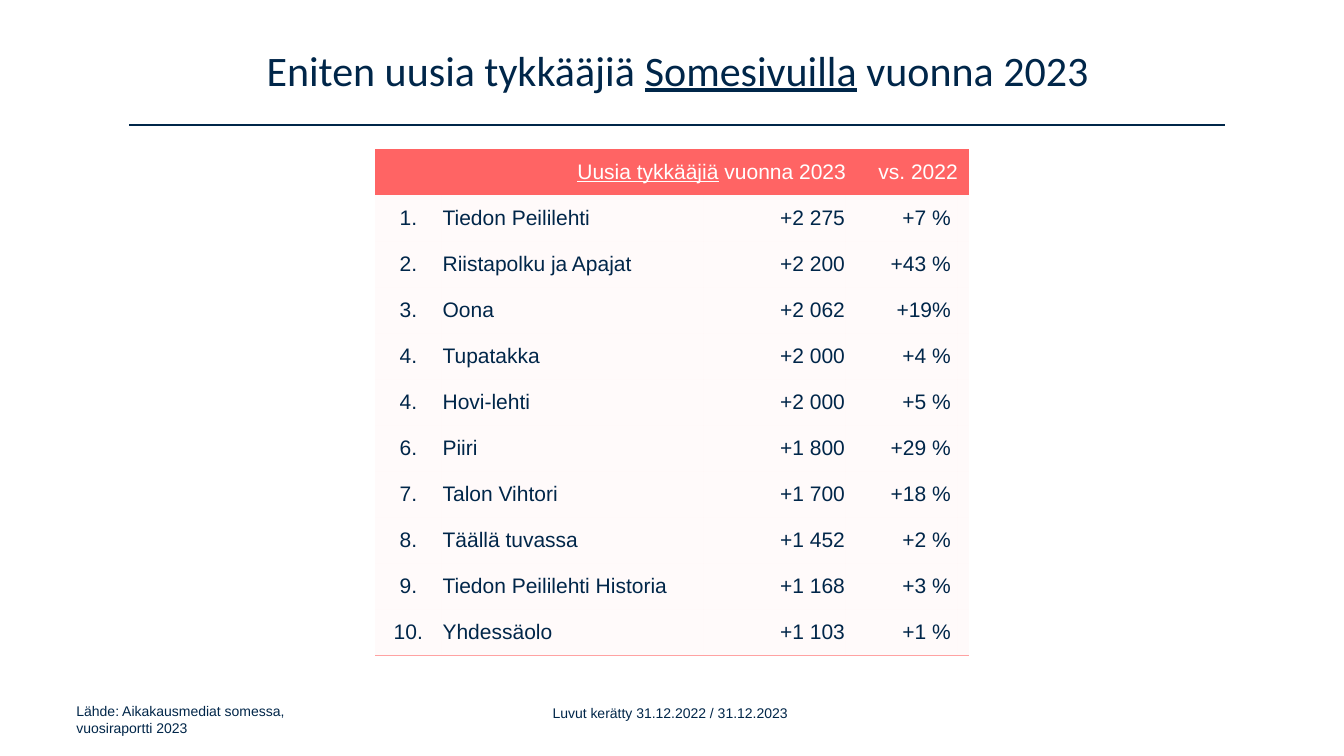
from lxml.etree import SubElement
from pptx import Presentation
from pptx.dml.color import RGBColor
from pptx.enum.shapes import MSO_CONNECTOR
from pptx.enum.text import MSO_ANCHOR, PP_ALIGN
from pptx.oxml import parse_xml
from pptx.oxml.ns import nsdecls, qn
from pptx.util import Inches, Pt

COLORS = {"navy": "002649", "coral": "FF6464", "blush": "FFE0E0", "border": "FFA2A2", "white": "FFFFFF"}
TITLE = {"name": "Calibri", "size": Pt(30), "bold": False}
NOTE = {"name": "Arial", "size": Pt(10)}
CELL = {"name": "Arial", "size": Pt(15), "bold": False}
COLUMNS = [0.66, 2.6, 1.41, 1.11, 0.11]
ALIGNMENTS = [PP_ALIGN.CENTER, PP_ALIGN.LEFT, PP_ALIGN.RIGHT, PP_ALIGN.RIGHT]
RANKING = [
    ("1.", "Tiedon Peililehti", "+2 275", "+7 %"),
    ("2.", "Riistapolku ja Apajat", "+2 200", "+43 %"),
    ("3.", "Oona", "+2 062", "+19%"),
    ("4.", "Tupatakka", "+2 000", "+4 %"),
    ("4.", "Hovi-lehti", "+2 000", "+5 %"),
    ("6.", "Piiri", "+1 800", "+29 %"),
    ("7.", "Talon Vihtori", "+1 700", "+18 %"),
    ("8.", "Täällä tuvassa", "+1 452", "+2 %"),
    ("9.", "Tiedon Peililehti Historia", "+1 168", "+3 %"),
    ("10.", "Yhdessäolo", "+1 103", "+1 %"),
]
NO_STYLE = "{2D5ABB26-0587-4C30-8999-92F81FD0307C}"


def write(paragraph, segments, font, color, alignment):
    """Fill a paragraph with (text, underlined) segments."""
    paragraph.alignment = alignment
    for text, underlined in segments:
        for index, line in enumerate(text.split("\n")):
            if index:
                paragraph.add_line_break()
            run = paragraph.add_run()
            run.text = line
            for key, value in {**font, "underline": underlined}.items():
                setattr(run.font, key, value)
            run.font.color.rgb = RGBColor.from_string(COLORS[color])


def place(shape, box):
    """Move and size a shape to a box given in inches."""
    for key, value in zip(("left", "top", "width", "height"), box):
        setattr(shape, key, Inches(value))


def add_heading(slide, box):
    """Format the title and draw the rule below it."""
    title = slide.shapes.title
    place(title, box)
    title.text_frame.vertical_anchor = MSO_ANCHOR.MIDDLE
    title.text_frame.word_wrap = True
    paragraph = title.text_frame.paragraphs[0]
    paragraph.line_spacing = 0.9
    segments = [("Eniten uusia tykkääjiä ", False), ("Somesivuilla", True), (" vuonna 2023", False)]
    write(paragraph, segments, TITLE, "navy", PP_ALIGN.CENTER)

    left, top, width, height = box
    rule_top = Inches(top + height + 0.01)
    rule = slide.shapes.add_connector(
        MSO_CONNECTOR.STRAIGHT, Inches(left + 0.36), rule_top, Inches(left + width - 0.37), rule_top)
    rule.line.color.rgb = RGBColor.from_string(COLORS["navy"])
    rule.line.width = Pt(1)
    SubElement(rule._element.spPr, qn("a:effectLst"))


def format_cell(cell, color, margins, opacity=None):
    """Set the fill, margins and anchor of a table cell."""
    cell.fill.solid()
    cell.fill.fore_color.rgb = RGBColor.from_string(COLORS[color])
    if opacity:
        SubElement(cell._tc.tcPr.find(".//" + qn("a:srgbClr")), qn("a:alpha"), val=str(opacity * 1000))
    cell.vertical_anchor = MSO_ANCHOR.MIDDLE
    for side, margin in zip(("left", "top", "right", "bottom"), margins):
        setattr(cell, "margin_" + side, Inches(margin))


def add_bottom_border(cell):
    """Draw a thin line along the bottom of a cell."""
    cell._tc.tcPr.insert(0, parse_xml(
        f'<a:lnB {nsdecls("a")} w="3175"><a:solidFill><a:srgbClr val="{COLORS["border"]}"/>'
        '</a:solidFill></a:lnB>'))


def add_ranking(slide, box):
    """Add the ranking table with its header row."""
    frame = slide.shapes.add_table(len(RANKING) + 1, len(COLUMNS), *map(Inches, box))
    table = frame.table
    table.first_row = table.horz_banding = False
    frame._element.find(".//" + qn("a:tableStyleId")).text = NO_STYLE
    for column, width in zip(table.columns, COLUMNS):
        column.width = Inches(width)
    for row in table.rows:
        row.height = Inches(box[3] / len(table.rows))

    for cell in table.rows[0].cells:
        format_cell(cell, "coral", (0, 0, 0, 0))
    table.cell(0, 0).merge(table.cell(0, 2))
    headers = {0: [("Uusia tykkääjiä", True), (" vuonna 2023", False)], 3: [("vs. 2022", False)]}
    for column, segments in headers.items():
        write(table.cell(0, column).text_frame.paragraphs[0], segments, CELL, "white", PP_ALIGN.RIGHT)

    for row, values in enumerate(RANKING, start=1):
        for column in range(len(COLUMNS)):
            cell = table.cell(row, column)
            format_cell(cell, "blush", (0.01, 0.01, 0.07 if column == 3 else 0.01, 0), 15)
            if row == len(RANKING):
                add_bottom_border(cell)
            if column < len(values):
                write(cell.text_frame.paragraphs[0], [(values[column], False)],
                      CELL, "navy", ALIGNMENTS[column])


def add_note(slide, box, text, alignment):
    """Add a small note in the footer."""
    note = slide.shapes.add_textbox(*map(Inches, box))
    note.text_frame.word_wrap = True
    write(note.text_frame.paragraphs[0], [(text, False)], NOTE, "navy", alignment)


def main():
    """Build the slide and save it."""
    presentation = Presentation()
    presentation.slide_width, presentation.slide_height = Inches(13.33), Inches(7.5)
    slide = presentation.slides.add_slide(presentation.slide_layouts[5])
    add_heading(slide, (0.92, 0.21, 11.6, 1.02))
    add_ranking(slide, (3.72, 1.48, 5.89, 5.02))
    add_note(slide, (0.66, 6.92, 6.58, 0.44),
             "Lähde: Aikakausmediat somessa,\nvuosiraportti 2023", PP_ALIGN.LEFT)
    add_note(slide, (3.42, 6.94, 6.45, 0.27),
             "Luvut kerätty 31.12.2022 / 31.12.2023", PP_ALIGN.CENTER)
    presentation.save("out.pptx")


if __name__ == "__main__":
    main()
